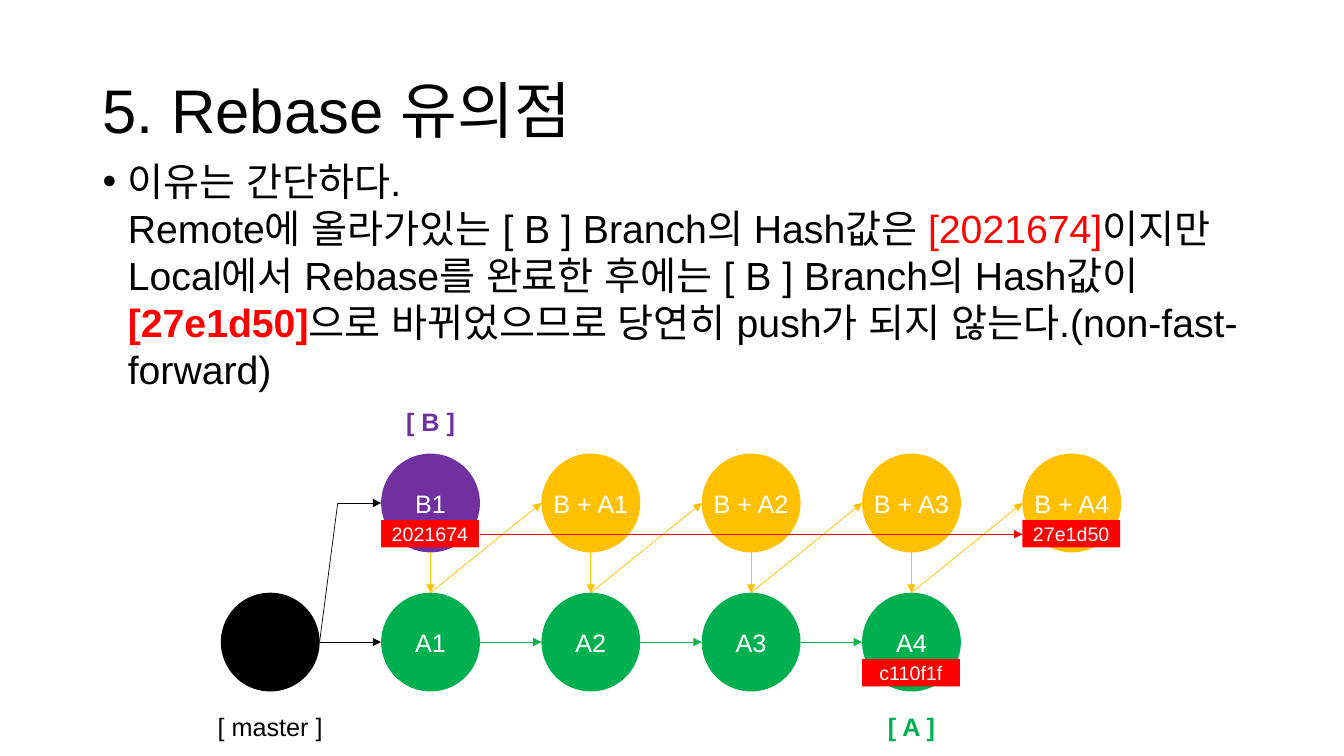
from lxml import etree
from pptx import Presentation
from pptx.dml.color import RGBColor
from pptx.enum.shapes import MSO_CONNECTOR, MSO_SHAPE
from pptx.enum.text import MSO_ANCHOR, PP_ALIGN
from pptx.oxml.ns import qn
from pptx.util import Inches, Pt

OVAL, RECTANGLE = MSO_SHAPE.OVAL, MSO_SHAPE.RECTANGLE
STRAIGHT = MSO_CONNECTOR.STRAIGHT
MIDDLE, CENTER = MSO_ANCHOR.MIDDLE, PP_ALIGN.CENTER
FONT = "Arial"
BLACK, WHITE, RED = "000000", "FFFFFF", "FF0000"
GREEN, PURPLE, AMBER = "00B050", "7030A0", "FFC000"
DIAMETER, STEP, ROW_GAP = 0.98, 1.59, 1.38
RADIUS = DIAMETER / 2
TAG_WIDTH, TAG_HEIGHT, TAG_DROP = 0.97, 0.27, 0.66


def color(value):
    return RGBColor.from_string(value)


def style(span, size, value, bold=False):
    span.font.name = FONT
    span.font.size = Pt(size)
    span.font.bold = bold
    span.font.color.rgb = color(value)
    etree.SubElement(span._r.get_or_add_rPr(), qn("a:ea"), typeface=FONT)


def add_text(page, left, top, width, height, wrap=True):
    box = page.shapes.add_textbox(Inches(left), Inches(top), Inches(width), Inches(height))
    box.text_frame.word_wrap = wrap
    return box.text_frame


def add_node(page, kind, left, top, width, height, fill, text="", size=18):
    node = page.shapes.add_shape(kind, Inches(left), Inches(top), Inches(width), Inches(height))
    node.shadow.inherit = False
    node.fill.solid()
    node.fill.fore_color.rgb = color(fill)
    node.line.fill.background()
    if text:
        frame = node.text_frame
        frame.text = text
        frame.word_wrap = kind == RECTANGLE
        frame.vertical_anchor = MIDDLE
        frame.paragraphs[0].alignment = CENTER
        style(frame.paragraphs[0].runs[0], size, WHITE)


def add_commit(page, left, top, fill, text=""):
    add_node(page, OVAL, left, top, DIAMETER, DIAMETER, fill, text)


def add_tag(page, left, top, text):
    add_node(page, RECTANGLE, left, top + TAG_DROP, TAG_WIDTH, TAG_HEIGHT, RED, text, 14)


def add_label(page, middle, top, width, text, value, bold=True):
    frame = add_text(page, middle - width / 2, top, width, 0.4, wrap=False)
    frame.text = text
    frame.paragraphs[0].alignment = CENTER
    style(frame.paragraphs[0].runs[0], 18, value, bold)


def add_link(page, start, end, value, arrow=True):
    link = page.shapes.add_connector(STRAIGHT, *[Inches(length) for length in (*start, *end)])
    link.line.width = Pt(0.5)
    link.line.color.rgb = color(value)
    if arrow:
        etree.SubElement(link.line._get_or_add_ln(), qn("a:tailEnd"), type="triangle")
    etree.SubElement(link._element.spPr, qn("a:effectLst"))


def add_title(page, left, top, width, height):
    frame = add_text(page, left, top, width, height)
    frame.vertical_anchor = MIDDLE
    para = frame.paragraphs[0]
    para.text = "5. Rebase 유의점"
    para.line_spacing = 0.9
    style(para.runs[0], 44, BLACK)


def add_reason(page, left, top, width, height):
    para = add_text(page, left, top, width, height).paragraphs[0]
    para.text = "이유는 간단하다.\vRemote에 올라가있는 [ B ] Branch의 Hash값은 "
    para.line_spacing = 1.0
    para.space_before = Pt(10)
    for span in para.runs:
        style(span, 28, BLACK)
    for text, value, bold in (
        ("[2021674]", RED, False),
        ("이지만 Local에서 Rebase를 완료한 후에는 [ B ] Branch의 Hash값이 ", BLACK, False),
        ("[27e1d50]", RED, True),
        ("으로 바뀌었으므로 당연히 push가 되지 않는다.(non-fast-forward)", BLACK, False),
    ):
        span = para.add_run()
        span.text = text
        style(span, 28, value, bold)
    properties = para._p.get_or_add_pPr()
    properties.set("marL", str(Inches(0.25)))
    properties.set("indent", str(Inches(-0.25)))
    etree.SubElement(properties, qn("a:buFont"), typeface=FONT)
    etree.SubElement(properties, qn("a:buChar"), char="•")


def add_graph(page, left, top):
    columns = [left + STEP * number for number in range(6)]
    lower = top + ROW_GAP
    upper_middle, lower_middle = top + RADIUS, lower + RADIUS
    fork = (left + DIAMETER, lower_middle)
    bend = (left + 1.16, upper_middle)

    add_commit(page, left, lower, BLACK)
    add_commit(page, columns[1], top, PURPLE, "B1")
    for number in range(1, 5):
        add_commit(page, columns[number], lower, GREEN, f"A{number}")
        add_commit(page, columns[number + 1], top, AMBER, f"B + A{number}")

    for number in range(1, 5):
        start, middle = columns[number - 1] + DIAMETER, columns[number] + RADIUS
        add_link(page, (start, lower_middle), (columns[number], lower_middle),
                 BLACK if number == 1 else GREEN)
        add_link(page, (middle, top + DIAMETER), (middle, lower), AMBER)
        add_link(page, (middle, lower), (columns[number + 1], upper_middle), AMBER)
    add_link(page, fork, bend, BLACK, arrow=False)
    add_link(page, bend, (columns[1], upper_middle), BLACK)

    add_tag(page, columns[1], top, "2021674")
    add_tag(page, columns[5], top, "27e1d50")
    add_tag(page, columns[4], lower, "c110f1f")
    tag_middle = top + 0.8
    add_link(page, (columns[1] + DIAMETER, tag_middle), (columns[5], tag_middle), RED)

    add_label(page, columns[1] + RADIUS, top - 0.52, 0.69, "[ B ]", PURPLE)
    add_label(page, columns[4] + RADIUS, lower + 1.13, 0.68, "[ A ]", GREEN)
    add_label(page, left + RADIUS, lower + 1.13, 1.66, "[ master ]", BLACK, bold=False)


def main():
    deck = Presentation()
    deck.slide_width, deck.slide_height = Inches(13.33), Inches(7.5)
    page = deck.slides.add_slide(deck.slide_layouts[6])
    add_title(page, 0.92, 0.4, 11.5, 1.45)
    add_reason(page, 0.92, 1.51, 11.5, 2.51)
    add_graph(page, 2.19, 4.5)
    deck.save("out.pptx")


if __name__ == "__main__":
    main()
